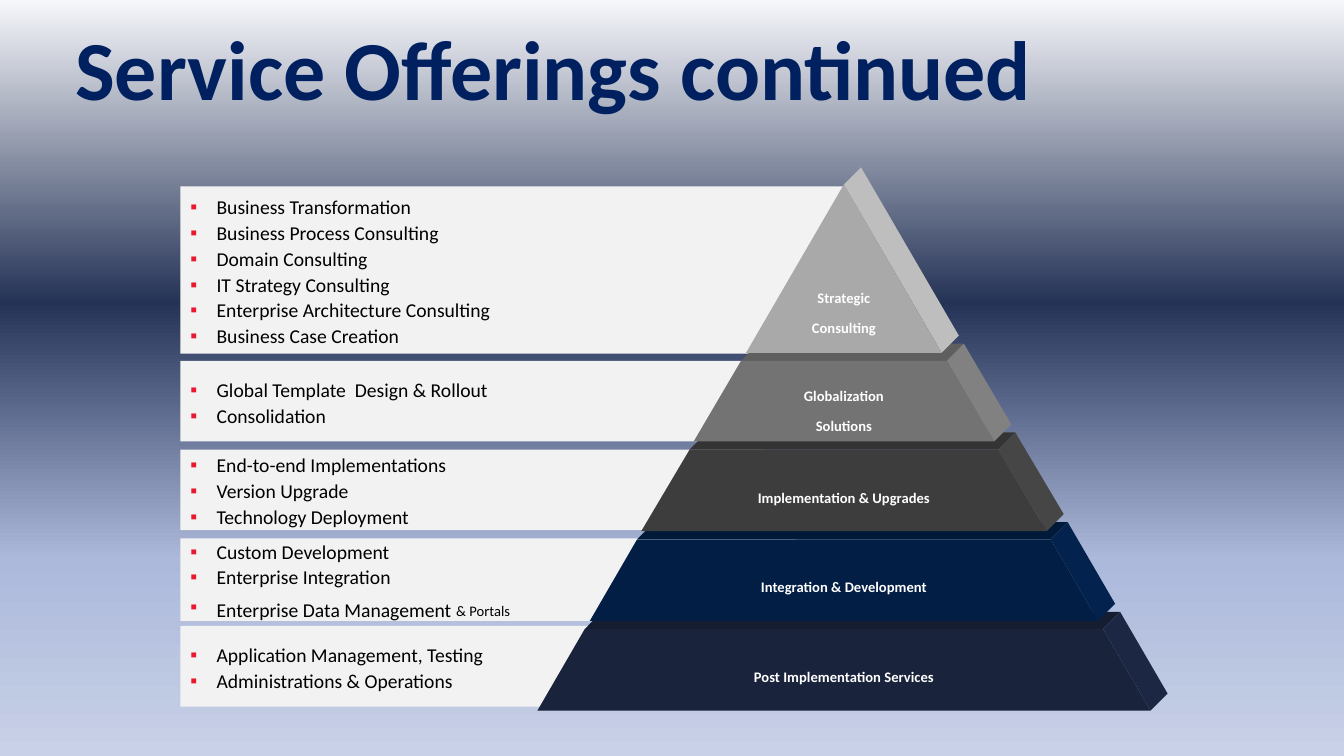
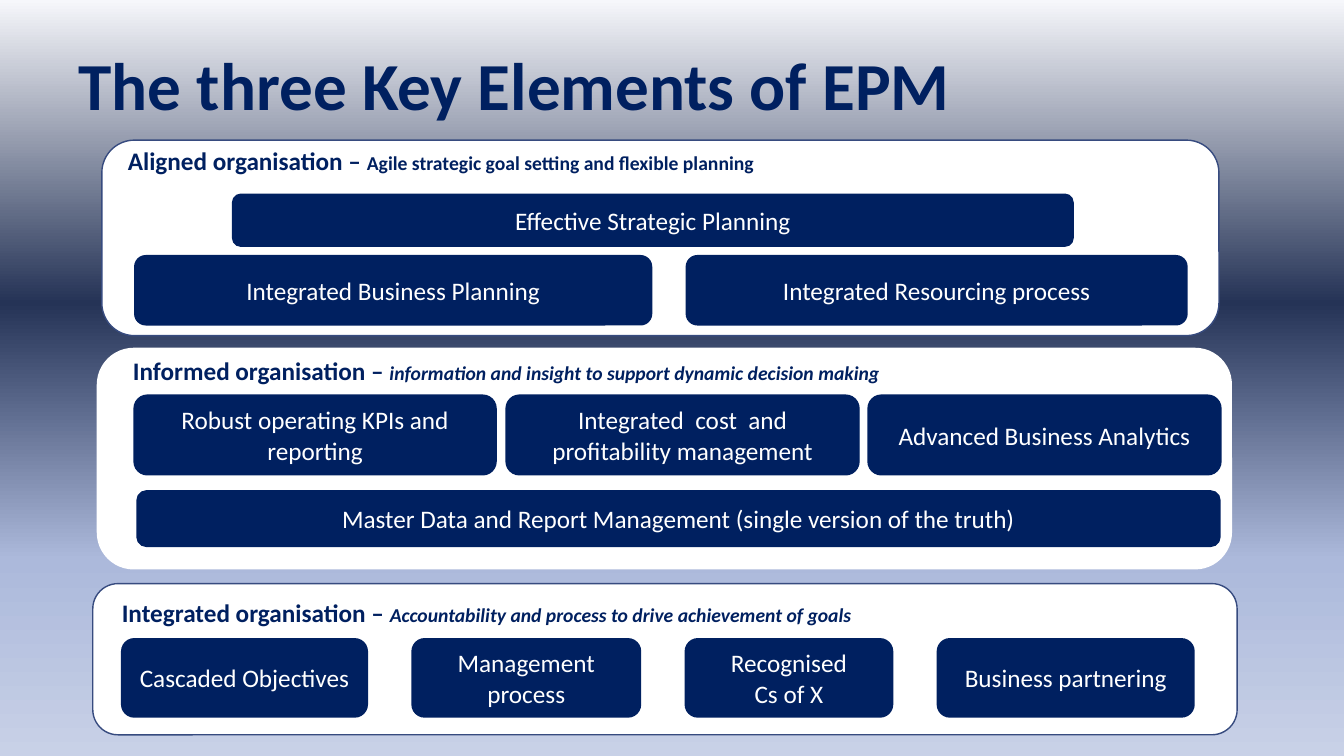
from lxml.etree import SubElement
from pptx import Presentation
from pptx.dml.color import RGBColor
from pptx.enum.shapes import MSO_SHAPE as Shape
from pptx.enum.text import MSO_ANCHOR as Anchor, MSO_AUTO_SIZE as AutoSize, PP_ALIGN as Align
from pptx.oxml.ns import qn
from pptx.util import Emu, Pt

PX = 9144
FONT = "Calibri"
COLORS = {
    "navy": "002060", "white": "FFFFFF", "black": "000000",
    "strip": "F2F2F2", "bullet": "E8182E", "outline": "374B7F",
}
BACKDROP = [(0, "F6F7FB"), (40, "253356"), (74, "ACB9DB"), (100, "C8D1E7")]
APEX_X, APEX_Y, SLOPE, DEPTH = 837, 183, 0.583, 17

# Strip (top, width, height) and its bullets
STRIPS = [
    ((621, 682, 80), ["Application Management, Testing", "Administrations & Operations"]),
    ((534, 611, 82), ["Custom Development", "Enterprise Integration",
                      "Enterprise Data Management |& Portals"]),
    ((446, 579, 80), ["End-to-end Implementations", "Version Upgrade",
                      "Technology Deployment"]),
    ((358, 579, 80), ["Global Template  Design & Rollout", "Consolidation"]),
    ((185, 660, 166), ["Business Transformation", "Business Process Consulting",
                       "Domain Consulting", "IT Strategy Consulting",
                       "Enterprise Architecture Consulting", "Business Case Creation"]),
]
# Tier top, bottom, label top, label, and front, side and lid colours
TIERS = [
    (624, 705, 648, "Post Implementation Services", ("19233C", "1C2743", "151D31")),
    (535, 616, 559, "Integration & Development", ("021E44", "03234E", "021A3A")),
    (446, 527, 470, "Implementation & Upgrades", ("3D3D3D", "464646", "343434")),
    (358, 438, 369, "Globalization\nSolutions", ("737373", "818181", "5F5F5F")),
    (183, 350, 272, "Strategic\nConsulting", ("A9A9A9", "BEBEBE", "A9A9A9")),
]
# Panel box, its outline, heading place, heading, tagline, italic, button outline, buttons
PANELS = [
    ((101, 139, 1108, 194), "outline", (117, 139), "Aligned organisation – ",
     "Agile strategic goal setting and flexible planning", False, None,
     [((230, 192, 835, 53), "Effective Strategic Planning"),
      ((133, 253, 514, 70), "Integrated Business Planning"),
      ((680, 253, 498, 70), "Integrated Resourcing process")]),
    ((96, 345, 1126, 220), None, (122, 348), "Informed organisation – ",
     "information and insight to support dynamic decision making", True, "navy",
     [((133, 392, 359, 79), "Robust operating KPIs and reporting"),
      ((502, 392, 350, 79), "Integrated  cost  and profitability management"),
      ((861, 392, 350, 79), "Advanced Business Analytics"),
      ((136, 487, 1074, 55), "Master Data and Report Management (single version of the truth)")]),
    ((92, 579, 1135, 150), "outline", (111, 588), "Integrated organisation – ",
     "Accountability and process to drive achievement of goals", True, None,
     [((120, 633, 245, 79), "Cascaded Objectives"),
      ((408, 633, 228, 79), "Management process"),
      ((679, 633, 207, 79), "Recognised\nCs of X"),
      ((929, 633, 256, 79), "Business partnering")]),
]


def emu(*lengths):
    """Turn px lengths into EMU."""
    return [Emu(length * PX) for length in lengths]


def rgb(color):
    """Look up a named colour or read a hex string."""
    return RGBColor.from_string(COLORS.get(color, color))


def raise_span(span):
    """Make a run a slight superscript."""
    span.font.size = Pt(18)
    span.font._element.set("baseline", "3000")


class Deck:
    """Holds the shared style and the current page."""

    def __init__(self):
        """Set the page size and the shared backdrop."""
        self.deck = Presentation()
        self.deck.slide_width, self.deck.slide_height = emu(1333, 750)
        master = self.deck.slide_master
        fill = master.background.fill
        fill.gradient()
        fill.gradient_angle = 270
        stops = next(master._element.iter(qn("a:gsLst")))
        for stop in list(stops):
            stops.remove(stop)
        for percent, color in BACKDROP:
            stop = SubElement(stops, qn("a:gs"), pos=str(percent * 1000))
            SubElement(stop, qn("a:srgbClr"), val=color)

    def style(self, para, size, color, bold=False, align=Align.LEFT):
        """Format a whole paragraph."""
        para.alignment = align
        para.font.name, para.font.size, para.font.bold = FONT, Pt(size), bold
        para.font.color.rgb = rgb(color)

    def paint(self, shape, fill, line=None):
        """Give a shape a flat fill and an optional outline."""
        shape.shadow.inherit = False
        shape.fill.solid()
        shape.fill.fore_color.rgb = rgb(fill)
        if line:
            shape.line.color.rgb = rgb(line)
            shape.line.width = Pt(1)
        else:
            shape.line.fill.background()

    def title(self, text, box, size, align):
        """Start a page with a title."""
        self.page = self.deck.slides.add_slide(self.deck.slide_layouts[5])
        title = self.page.shapes.title
        title.left, title.top, title.width, title.height = emu(*box)
        frame = title.text_frame
        frame.text = text
        frame.auto_size = AutoSize.NONE
        frame.vertical_anchor = Anchor.MIDDLE
        self.style(frame.paragraphs[0], size, "navy", True, align)

    def block(self, box, fill, line=None, kind=Shape.ROUNDED_RECTANGLE):
        """Add a filled shape and return its text frame."""
        shape = self.page.shapes.add_shape(kind, *emu(*box))
        self.paint(shape, fill, line)
        frame = shape.text_frame
        frame.word_wrap = True
        frame.vertical_anchor = Anchor.MIDDLE
        return frame

    def button(self, box, text, line):
        """Add a navy box with centred text."""
        frame = self.block(box, "navy", line)
        frame.text = text
        for para in frame.paragraphs:
            self.style(para, 18, "white", align=Align.CENTER)

    def heading(self, place, text, tagline, italic):
        """Add a panel heading with a smaller tagline."""
        frame = self.page.shapes.add_textbox(*emu(*place, 1050, 40)).text_frame
        frame.word_wrap = True
        para = frame.paragraphs[0]
        para.add_run().text = text
        span = para.add_run()
        span.text = tagline
        self.style(para, 18, "navy", True)
        span.font.size, span.font.italic = Pt(14), italic

    def strip(self, box, items):
        """Add a pale strip with a bullet list; text after a bar is raised."""
        frame = self.block(box, "strip", kind=Shape.RECTANGLE)
        frame.text = "\n".join(items)
        for para, item in zip(frame.paragraphs, items):
            para.line_spacing = 1.1
            props = para._p.get_or_add_pPr()
            indent = emu(26)[0]
            props.set("marL", str(indent))
            props.set("indent", str(-indent))
            color = SubElement(props, qn("a:buClr"))
            SubElement(color, qn("a:srgbClr"), val=COLORS["bullet"])
            SubElement(props, qn("a:buFont"), typeface="Arial")
            SubElement(props, qn("a:buChar"), char="▪")
            self.style(para, 14, "black")
            lead, _, tail = item.partition("|")
            if tail:
                para.runs[0].text = lead
                span = para.add_run()
                span.text = tail
                raise_span(span)

    def outline(self, points, fill):
        """Add a closed polygon."""
        builder = self.page.shapes.build_freeform(*points[0], scale=PX)
        builder.add_line_segments(points[1:], close=True)
        self.paint(builder.convert_to_shape(), fill)

    def tier(self, top, bottom, colors):
        """Add one solid slice of the pyramid."""
        front, side, lid = colors
        upper, lower = [round((y - APEX_Y) * SLOPE) for y in (top, bottom)]
        top_left, top_right = (APEX_X - upper, top), (APEX_X + upper, top)
        low_left, low_right = (APEX_X - lower, bottom), (APEX_X + lower, bottom)
        back_left, back_right, back_low = [
            (x + DEPTH, y - DEPTH) for x, y in (top_left, top_right, low_right)]
        if upper:
            self.outline([top_left, back_left, back_right, top_right], lid)
        self.outline([top_right, back_right, back_low, low_right], side)
        self.outline([top_left, top_right, low_right, low_left], front)

    def label(self, top, text):
        """Add a tier label centred under the apex."""
        height = 50 if "\n" in text else 30
        frame = self.page.shapes.add_textbox(*emu(APEX_X - 114, top, 228, height)).text_frame
        frame.word_wrap = False
        frame.auto_size = AutoSize.SHAPE_TO_FIT_TEXT
        frame.text = text
        for para in frame.paragraphs:
            self.style(para, 18, "white", True, Align.CENTER)
            raise_span(para.runs[0])


def main():
    """Build both pages."""
    deck = Deck()
    deck.title("Service Offerings continued", (0, 12, 1098, 109), 60, Align.CENTER)
    for (top, width, height), items in STRIPS:
        deck.strip((179, top, width, height), items)
    for top, bottom, label_top, text, colors in TIERS:
        deck.tier(top, bottom, colors)
        deck.label(label_top, text)

    deck.title("The three Key Elements of EPM", (68, 28, 1007, 109), 48, Align.LEFT)
    for box, line, place, text, tagline, italic, button_line, buttons in PANELS:
        deck.block(box, "white", line)
        deck.heading(place, text, tagline, italic)
        for button_box, caption in buttons:
            deck.button(button_box, caption, button_line)
    deck.deck.save("out.pptx")


if __name__ == "__main__":
    main()
